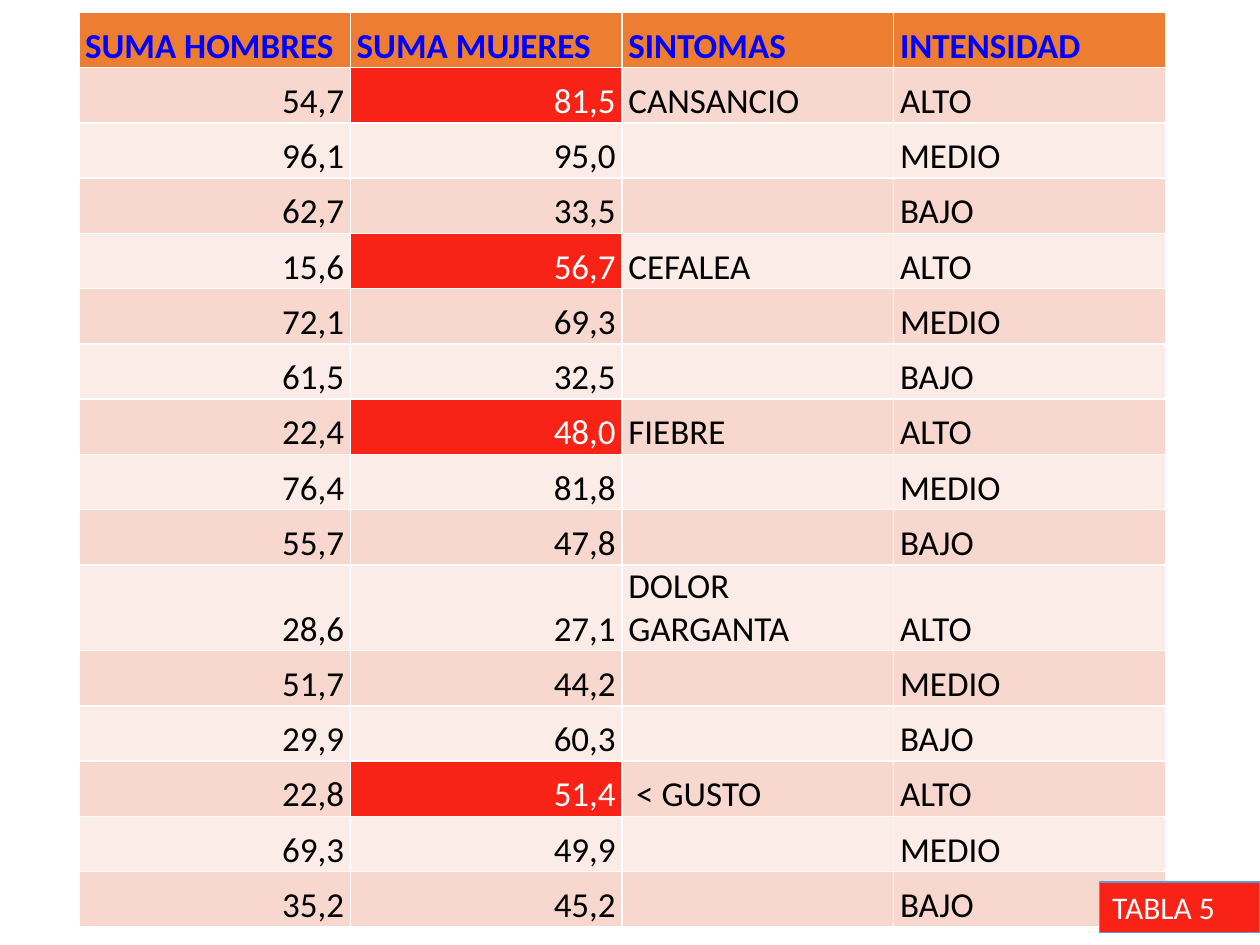
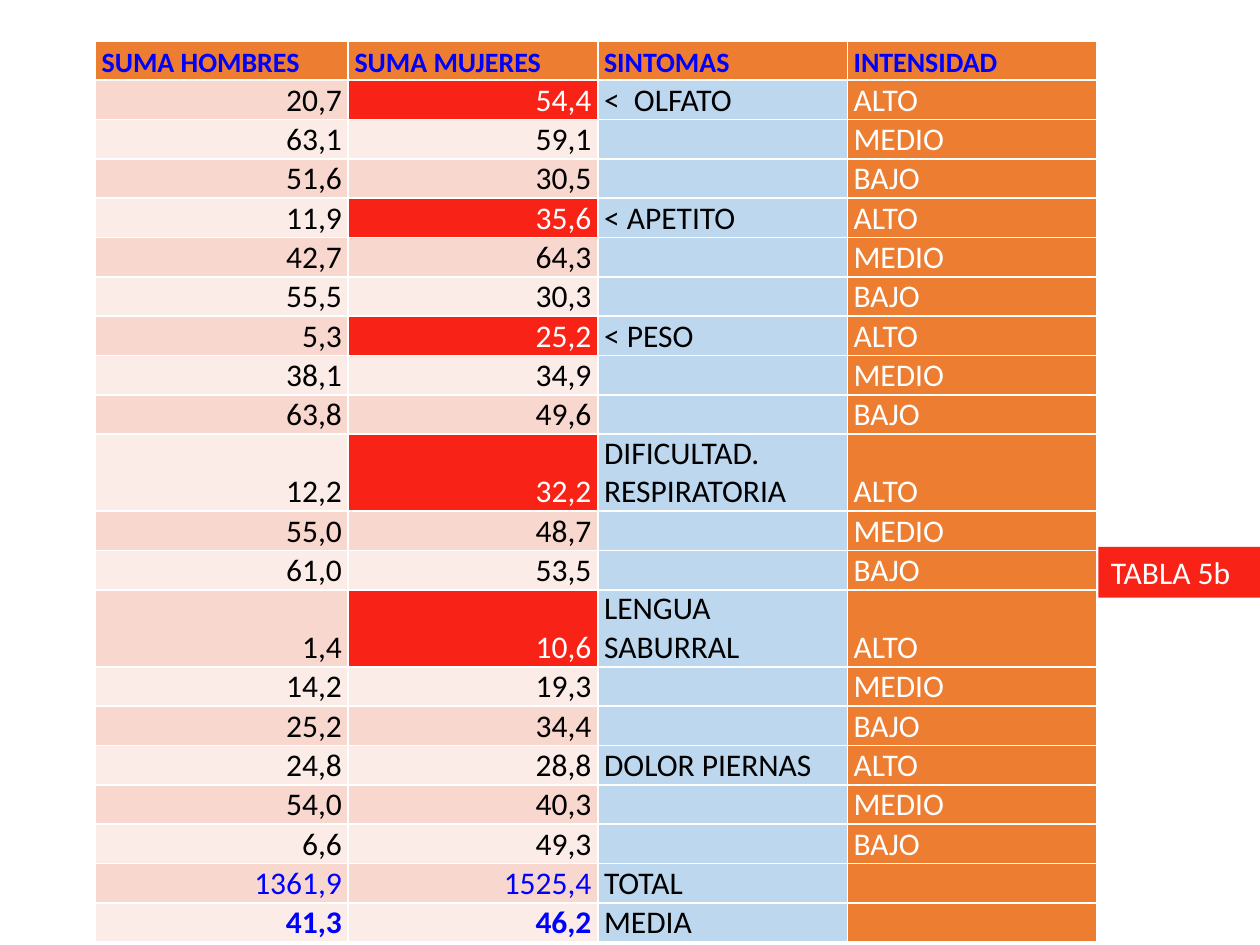
from itertools import cycle

from pptx import Presentation
from pptx.dml.color import RGBColor
from pptx.enum.shapes import MSO_SHAPE
from pptx.enum.text import MSO_ANCHOR, PP_ALIGN
from pptx.util import Pt

RECTANGLE = MSO_SHAPE.RECTANGLE
TOP, BOTTOM = MSO_ANCHOR.TOP, MSO_ANCHOR.BOTTOM
LEFT, RIGHT = PP_ALIGN.LEFT, PP_ALIGN.RIGHT

FONT = "Calibri"
COLORS = {
    "orange": "ED7D31",
    "red": "F82316",
    "dark_band": "F8D7CE",
    "light_band": "FCECE8",
    "sky": "BDD7EE",
    "outline": "5B9BD5",
    "blue": "0000FF",
    "black": "000000",
    "white": "FFFFFF",
}
HEADERS = ["SUMA HOMBRES", "SUMA MUJERES", "SINTOMAS", "INTENSIDAD"]
INTENSITIES = ["ALTO", "MEDIO", "BAJO"]
NOT_HIGHLIGHTED = {"DOLOR GARGANTA", "DOLOR PIERNAS"}
TWO_LINES = {"DOLOR GARGANTA", "DIFICULTAD. RESPIRATORIA", "LENGUA SABURRAL"}

# Each symptom: men and women at high, medium and low intensity
SYMPTOMS_5 = {
    "CANSANCIO": [("54,7", "81,5"), ("96,1", "95,0"), ("62,7", "33,5")],
    "CEFALEA": [("15,6", "56,7"), ("72,1", "69,3"), ("61,5", "32,5")],
    "FIEBRE": [("22,4", "48,0"), ("76,4", "81,8"), ("55,7", "47,8")],
    "DOLOR GARGANTA": [("28,6", "27,1"), ("51,7", "44,2"), ("29,9", "60,3")],
    " < GUSTO": [("22,8", "51,4"), ("69,3", "49,9"), ("35,2", "45,2")],
}
SYMPTOMS_5B = {
    "<  OLFATO": [("20,7", "54,4"), ("63,1", "59,1"), ("51,6", "30,5")],
    "< APETITO": [("11,9", "35,6"), ("42,7", "64,3"), ("55,5", "30,3")],
    "< PESO": [("5,3", "25,2"), ("38,1", "34,9"), ("63,8", "49,6")],
    "DIFICULTAD. RESPIRATORIA": [("12,2", "32,2"), ("55,0", "48,7"), ("61,0", "53,5")],
    "LENGUA SABURRAL": [("1,4", "10,6"), ("14,2", "19,3"), ("25,2", "34,4")],
    "DOLOR PIERNAS": [("24,8", "28,8"), ("54,0", "40,3"), ("6,6", "49,3")],
}
SUMMARY_5B = [("1361,9", "1525,4", "TOTAL", ""), ("41,3", "46,2", "MEDIA", "")]


def symptom_rows(symptoms):
    """Three rows per symptom, named only in the first."""
    return [
        (men, women, symptom if intensity == "ALTO" else "", intensity)
        for symptom, values in symptoms.items()
        for (men, women), intensity in zip(values, INTENSITIES)
    ]


class Deck:
    def __init__(self):
        self.presentation = Presentation()
        self.presentation.slide_width = Pt(720)
        self.presentation.slide_height = Pt(540)
        self.slide = None

    def new_slide(self):
        self.slide = self.presentation.slides.add_slide(self.presentation.slide_layouts[6])

    @staticmethod
    def color(name):
        return RGBColor.from_string(COLORS[name])

    def paint(self, part, name):
        part.fill.solid()
        part.fill.fore_color.rgb = self.color(name)

    def set_text(self, frame, text, size, color, bold=False, align=LEFT):
        paragraph = frame.paragraphs[0]
        paragraph.text = text
        paragraph.alignment = align
        font = paragraph.font
        font.name, font.size, font.bold = FONT, Pt(size), bold
        font.color.rgb = self.color(color)

    def cell(self, cell, text, fill, size, color, bold=False, align=LEFT):
        cell.vertical_anchor = BOTTOM
        cell.margin_left = cell.margin_right = Pt(3.6)
        cell.margin_top = cell.margin_bottom = 0
        self.paint(cell, fill)
        self.set_text(cell.text_frame, text, size, color, bold, align)

    def symptom_table(self, left, top, widths, row_height, tall_height, rows,
                      header_size, size, side_fills=None, side_color="black"):
        """side_fills colours the symptom and intensity columns instead of the bands."""
        table = self.slide.shapes.add_table(
            len(rows) + 1, len(HEADERS), Pt(left), Pt(top),
            Pt(sum(widths)), Pt(row_height * (len(rows) + 1))).table
        for column, width in zip(table.columns, widths):
            column.width = Pt(width)
        table.rows[0].height = Pt(row_height)
        for column, header in enumerate(HEADERS):
            self.cell(table.cell(0, column), header, "orange", header_size, "blue", True)

        bands = cycle(["dark_band", "light_band"])
        for index, (row, band) in enumerate(zip(rows, bands), start=1):
            men, women, symptom, intensity = row
            table.rows[index].height = Pt(tall_height if symptom in TWO_LINES else row_height)
            highlighted = symptom and intensity == "ALTO" and symptom not in NOT_HIGHLIGHTED
            number_color = "black" if intensity else "blue"
            bold = symptom == "MEDIA"
            symptom_fill, intensity_fill = side_fills or (band, band)
            men_cell, women_cell, symptom_cell, intensity_cell = table.rows[index].cells
            self.cell(men_cell, men, band, size, number_color, bold, RIGHT)
            self.cell(women_cell, women, "red" if highlighted else band, size,
                      "white" if highlighted else number_color, bold, RIGHT)
            self.cell(symptom_cell, symptom, symptom_fill, size, "black")
            self.cell(intensity_cell, intensity, intensity_fill, size, side_color)

    def table_tag(self, text, left, top, outline=None):
        """Red tag that runs to the right edge of the slide."""
        tag = self.slide.shapes.add_shape(RECTANGLE, Pt(left), Pt(top), Pt(720 - left), Pt(29))
        tag.shadow.inherit = False
        self.paint(tag, "red")
        if outline:
            tag.line.color.rgb = self.color(outline)
            tag.line.width = Pt(0.75)
        else:
            tag.line.fill.background()
        tag.text_frame.word_wrap = True
        tag.text_frame.vertical_anchor = TOP
        self.set_text(tag.text_frame, text, 18, "white")


def main():
    deck = Deck()

    # Table 5
    deck.new_slide()
    deck.symptom_table(45, 7, [155.25] * 4, 31.6, 49, symptom_rows(SYMPTOMS_5), 20, 20)
    deck.table_tag("TABLA 5", 628.5, 504, "outline")

    # Table 5b, with totals and means
    deck.new_slide()
    deck.symptom_table(54.5, 23.3, [144.5] + [142.6] * 3, 22.5, 44,
                       symptom_rows(SYMPTOMS_5B) + SUMMARY_5B, 16, 18,
                       ("sky", "orange"), "white")
    deck.table_tag("TABLA 5b", 627.7, 312.5)

    deck.presentation.save("out.pptx")


if __name__ == "__main__":
    main()
